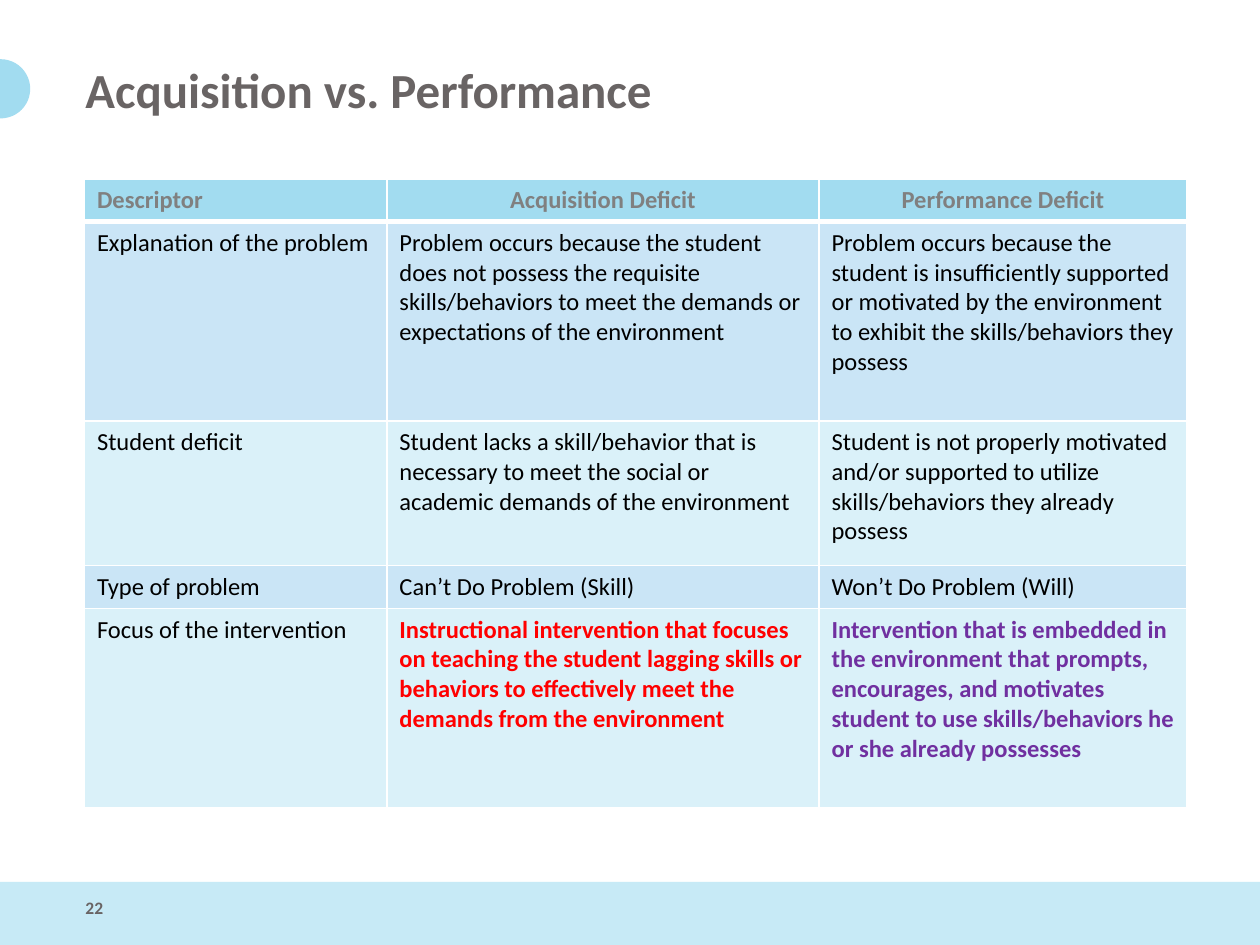
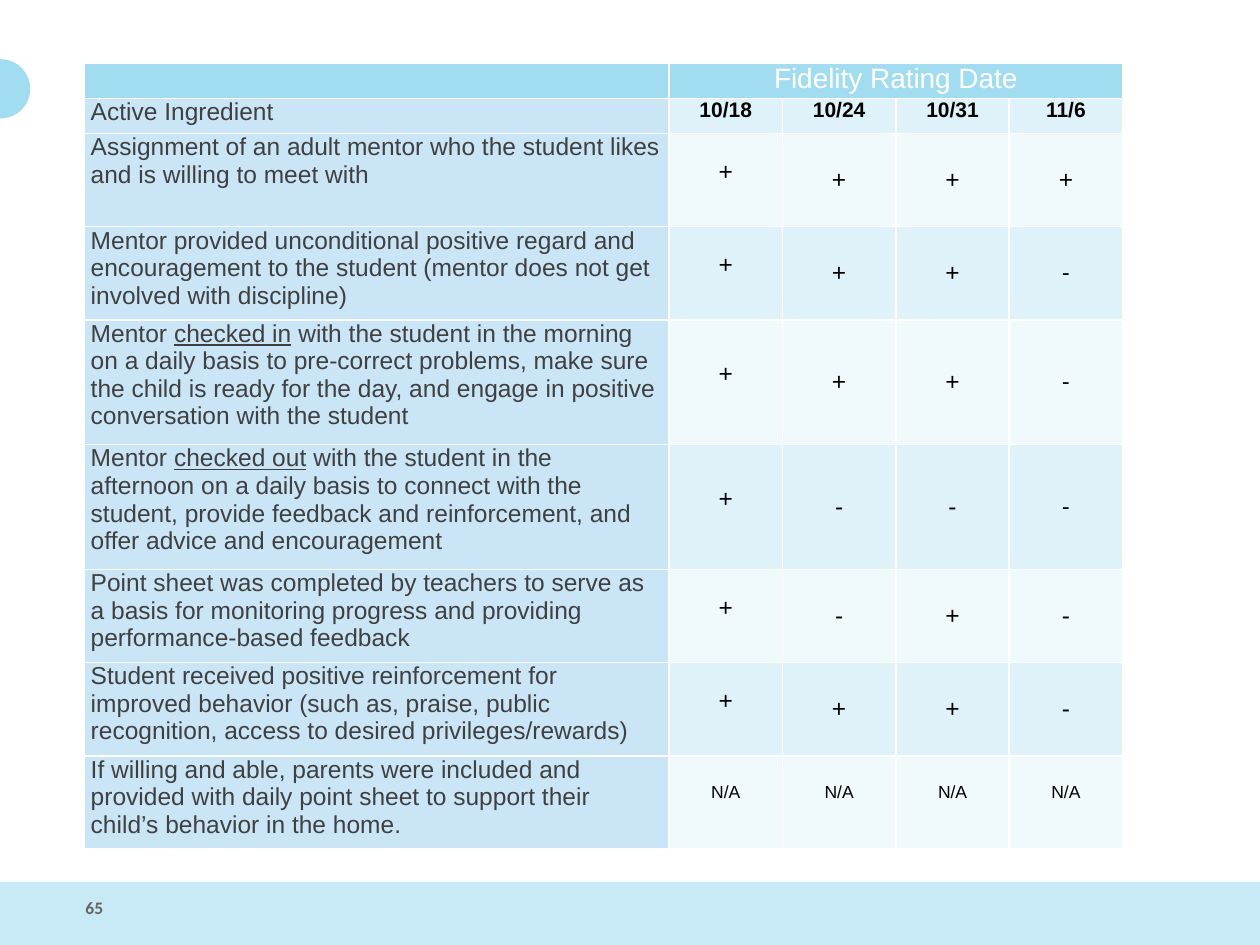
from lxml import etree
from pptx import Presentation
from pptx.dml.color import RGBColor
from pptx.enum.shapes import MSO_SHAPE
from pptx.enum.text import MSO_ANCHOR, PP_ALIGN
from pptx.oxml.ns import qn
from pptx.util import Inches, Pt

LEFT, CENTER = PP_ALIGN.LEFT, PP_ALIGN.CENTER
TOP, MIDDLE = MSO_ANCHOR.TOP, MSO_ANCHOR.MIDDLE
RECTANGLE, OVAL = MSO_SHAPE.RECTANGLE, MSO_SHAPE.OVAL

WHITE = RGBColor(0xFF, 0xFF, 0xFF)
BLACK = RGBColor(0x00, 0x00, 0x00)
TITLE_GRAY = RGBColor(0x69, 0x64, 0x64)
HEADER_GRAY = RGBColor(0x80, 0x80, 0x80)
INGREDIENT_GRAY = RGBColor(0x40, 0x40, 0x40)
RED = RGBColor(0xFF, 0x00, 0x00)
PURPLE = RGBColor(0x70, 0x30, 0xA0)
SKY = RGBColor(0xA2, 0xDC, 0xF0)
FOOTER_BLUE = RGBColor(0xC7, 0xEA, 0xF6)
ROW_BLUE = RGBColor(0xCA, 0xE5, 0xF6)
ROW_AQUA = RGBColor(0xDA, 0xF1, 0xF9)
RATING_TINT = RGBColor(0xE0, 0xF2, 0xF9)
RATING_PALE = RGBColor(0xF0, 0xF9, 0xFC)

BODY_FONT, RATING_FONT = "Calibri", "Arial"

DEFICITS = [
    ("Descriptor", "Acquisition Deficit", "Performance Deficit"),
    ("Explanation of the problem",
     "Problem occurs because the student does not possess the requisite "
     "skills/behaviors to meet the demands or expectations of the environment",
     "Problem occurs because the student is insufficiently supported or motivated "
     "by the environment to exhibit the skills/behaviors they possess"),
    ("Student deficit",
     "Student lacks a skill/behavior that is necessary to meet the social or "
     "academic demands of the environment",
     "Student is not properly motivated and/or supported to utilize "
     "skills/behaviors they already possess"),
    ("Type of problem", "Can’t Do Problem (Skill)", "Won’t Do Problem (Will)"),
    ("Focus of the intervention",
     "Instructional intervention that focuses on teaching the student lagging "
     "skills or behaviors to effectively meet the demands from the environment",
     "Intervention that is embedded in the environment that prompts, encourages, "
     "and motivates student to use skills/behaviors he or she already possesses"),
]
FOCUS_COLORS = {1: RED, 2: PURPLE}

RATING_DATES = ["10/18", "10/24", "10/31", "11/6"]
UNDERLINE_MARK = "_"
INGREDIENTS = [
    ("Assignment of an adult mentor who the student likes and is willing to meet with",
     "+ + + +"),
    ("Mentor provided unconditional positive regard and encouragement to the "
     "student (mentor does not get involved with discipline)", "+ + + -"),
    ("Mentor _checked in_ with the student in the morning on a daily basis to "
     "pre-correct problems, make sure the child is ready for the day, and engage "
     "in positive conversation with the student", "+ + + -"),
    ("Mentor _checked out_ with the student in the afternoon on a daily basis to "
     "connect with the student, provide feedback and reinforcement, and offer "
     "advice and encouragement", "+ - - -"),
    ("Point sheet was completed by teachers to serve as a basis for monitoring "
     "progress and providing performance-based feedback", "+ - + -"),
    ("Student received positive reinforcement for improved behavior (such as, "
     "praise, public recognition, access to desired privileges/rewards)", "+ + + -"),
    ("If willing and able, parents were included and provided with daily point "
     "sheet to support their child’s behavior in the home.", "N/A N/A N/A N/A"),
]
CALIBRI_LAST_MARKS = range(3, 6)


def style_run(run, size, color, font, bold=False):
    run.font.size = Pt(size)
    run.font.name = font
    run.font.bold = bold
    run.font.color.rgb = color


def add_label(slide, box, text, size, anchor):
    frame = slide.shapes.add_textbox(*map(Inches, box)).text_frame
    frame.word_wrap = True
    frame.vertical_anchor = anchor
    frame.text = text
    style_run(frame.paragraphs[0].runs[0], size, TITLE_GRAY, BODY_FONT, True)


def add_plain_shape(slide, kind, box, color):
    shape = slide.shapes.add_shape(kind, *map(Inches, box))
    shape.shadow.inherit = False
    shape.fill.solid()
    shape.fill.fore_color.rgb = color
    shape.line.fill.background()


def add_page(deck, number):
    slide = deck.slides.add_slide(deck.slide_layouts[6])
    add_plain_shape(slide, RECTANGLE, (0, 7, 10, 0.5), FOOTER_BLUE)
    add_plain_shape(slide, OVAL, (-0.23, 0.47, 0.47, 0.47), SKY)
    add_label(slide, (0.58, 7.08, 0.62, 0.25), number, 10, MIDDLE)
    return slide


def add_grid(slide, left, top, columns, rows):
    box = (left, top, sum(columns), sum(rows))
    table = slide.shapes.add_table(len(rows), len(columns), *map(Inches, box)).table
    table.first_row = False
    table.horz_banding = False
    for column, width in zip(table.columns, columns):
        column.width = Inches(width)
    for row, height in zip(table.rows, rows):
        row.height = Inches(height)
    return table


def format_cell(cell, fill, margins, top_line=1, bottom_line=1):
    properties = cell._tc.get_or_add_tcPr()
    widths = {"a:lnL": 1, "a:lnR": 1, "a:lnT": top_line, "a:lnB": bottom_line}
    for side, width in widths.items():
        line = etree.SubElement(properties, qn(side), w=str(Pt(width)))
        solid = etree.SubElement(line, qn("a:solidFill"))
        etree.SubElement(solid, qn("a:srgbClr"), val=str(WHITE))
    cell.fill.solid()
    cell.fill.fore_color.rgb = fill
    side, top, bottom = map(Inches, margins)
    cell.margin_left = cell.margin_right = side
    cell.margin_top, cell.margin_bottom = top, bottom


def write_cell(cell, text, size, color, font, bold=False, align=LEFT, anchor=TOP):
    cell.vertical_anchor = anchor
    paragraph = cell.text_frame.paragraphs[0]
    paragraph.alignment = align
    for index, part in enumerate(text.split(UNDERLINE_MARK)):
        run = paragraph.add_run()
        run.text = part
        style_run(run, size, color, font, bold)
        if index % 2:
            run.font.underline = True


def add_deficit_table(slide, left, top):
    table = add_grid(slide, left, top, [2.4, 3.43, 2.92],
                     [0.34, 1.58, 1.15, 0.34, 1.58])
    last = len(DEFICITS) - 1
    for r, texts in enumerate(DEFICITS):
        header = r == 0
        fill = SKY if header else (ROW_AQUA, ROW_BLUE)[r % 2]
        for c, text in enumerate(texts):
            cell = table.cell(r, c)
            format_cell(cell, fill, (0.1, 0.05, 0.05),
                        top_line=3 if r == 1 else 1,
                        bottom_line=3 if header else 1)
            focus = FOCUS_COLORS.get(c) if r == last else None
            color = HEADER_GRAY if header else focus or BLACK
            write_cell(cell, text, 14, color, BODY_FONT,
                       bold=header or focus is not None,
                       align=CENTER if header and c else LEFT)


def rating_fill(r, c):
    if r == 0:
        return SKY
    if c == 0:
        return ROW_BLUE
    return (RATING_PALE, RATING_TINT)[r % 2]


def rating_lift(mark, c):
    if mark == "N/A":
        return 0.16
    return 0.13 if c == 1 else 0


def add_fidelity_table(slide, left, top):
    heights = [0.28] * 2 + [0.74] * 2 + [0.99] * 2 + [0.74] * 3
    table = add_grid(slide, left, top, [4.64] + [0.9] * 4, heights)
    ratings = [marks.split() for _, marks in INGREDIENTS]
    for r in range(len(heights)):
        for c in range(len(RATING_DATES) + 1):
            lift = rating_lift(ratings[r - 2][c - 1], c) if r > 1 and c else 0
            format_cell(table.cell(r, c), rating_fill(r, c), (0.05, 0, lift))
            if r == 0 and c != 1:
                paragraph = table.cell(r, c).text_frame.paragraphs[0]
                etree.SubElement(paragraph._p, qn("a:endParaRPr"), sz="1400")

    table.cell(0, 1).merge(table.cell(0, len(RATING_DATES)))
    write_cell(table.cell(0, 1), "Fidelity Rating Date", 16, WHITE, RATING_FONT,
               align=CENTER)
    names = ["Active Ingredient"] + [name for name, _ in INGREDIENTS]
    for r, name in enumerate(names, 1):
        write_cell(table.cell(r, 0), name, 14, INGREDIENT_GRAY, RATING_FONT)
    for c, date in enumerate(RATING_DATES, 1):
        write_cell(table.cell(1, c), date, 12, BLACK, RATING_FONT, True, CENTER)
    for r, marks in enumerate(ratings, 2):
        for c, mark in enumerate(marks, 1):
            in_calibri = c == len(RATING_DATES) and r in CALIBRI_LAST_MARKS
            write_cell(table.cell(r, c), mark, 10 if mark == "N/A" else 14, BLACK,
                       BODY_FONT if in_calibri else RATING_FONT,
                       align=CENTER, anchor=MIDDLE)


def main():
    deck = Presentation()
    deck.slide_width, deck.slide_height = Inches(10), Inches(7.5)

    comparison = add_page(deck, "22")
    add_label(comparison, (0.58, 0.42, 8.5, 0.75), "Acquisition vs. Performance",
              28, TOP)
    add_deficit_table(comparison, 0.67, 1.42)

    fidelity = add_page(deck, "65")
    add_fidelity_table(fidelity, 0.67, 0.5)

    deck.save("out.pptx")


if __name__ == "__main__":
    main()
